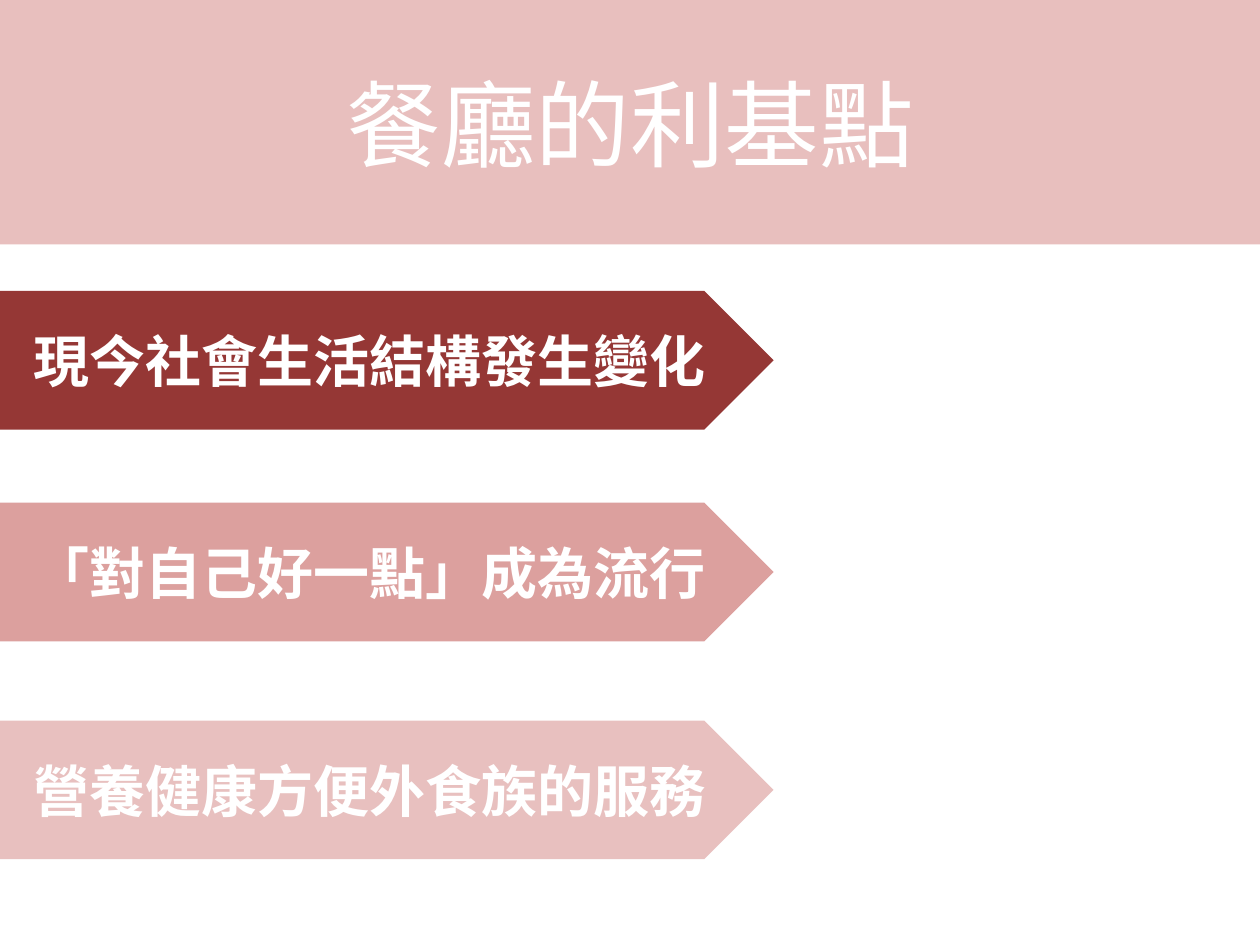
from lxml.etree import SubElement
from pptx import Presentation
from pptx.dml.color import RGBColor
from pptx.enum.shapes import MSO_SHAPE
from pptx.enum.text import MSO_ANCHOR, MSO_AUTO_SIZE, PP_ALIGN
from pptx.oxml.ns import qn
from pptx.util import Pt

WHITE = RGBColor(0xFF, 0xFF, 0xFF)
PINK = RGBColor(0xE6, 0xB9, 0xB8)
ROSE = RGBColor(0xD9, 0x96, 0x94)
MAROON = RGBColor(0x95, 0x37, 0x35)
FONT = "Noto Sans CJK SC"

# Content: text, top, fill colour, opacity in percent
TITLE = "餐廳的利基點"
POINTS = [
    ("現今社會生活結構發生變化", 166.3, MAROON, 100),
    ("「對自己好一點」成為流行", 287.3, ROSE, 90),
    ("營養健康方便外食族的服務", 411.8, PINK, 89),
]
SLIDE_W, SLIDE_H = 720, 540
TITLE_H = 139.7
ARROW_W, ARROW_H = 442.1, 79.2


def place(sp, left, top, width, height):
    sp.left, sp.top, sp.width, sp.height = map(Pt, (left, top, width, height))


def fill_shape(sp, color, opacity):
    sp.fill.solid()
    sp.fill.fore_color.rgb = color
    sp.line.fill.background()
    if opacity < 100:
        clr = sp.fill._xPr.find(qn("a:solidFill"))[0]
        SubElement(clr, qn("a:alpha"), val=str(opacity * 1000))


def write(sp, text, size, bold):
    tf = sp.text_frame
    tf.word_wrap = True
    tf.auto_size = MSO_AUTO_SIZE.NONE
    tf.vertical_anchor = MSO_ANCHOR.MIDDLE
    p = tf.paragraphs[0]
    p.alignment = PP_ALIGN.CENTER
    r = p.add_run()
    r.text = text
    for key, value in {"name": FONT, "size": Pt(size), "bold": bold}.items():
        setattr(r.font, key, value)
    r.font.color.rgb = WHITE
    SubElement(r.font._element, qn("a:ea"), typeface=FONT)


prs = Presentation()
prs.slide_width, prs.slide_height = Pt(SLIDE_W), Pt(SLIDE_H)
s = prs.slides.add_slide(prs.slide_layouts[5])

# Title band
title = s.shapes.title
place(title, 0, 0, SLIDE_W, TITLE_H)
fill_shape(title, PINK, 90)
write(title, TITLE, 54, False)

# Arrow for each point
for text, top, color, opacity in POINTS:
    sp = s.shapes.add_shape(MSO_SHAPE.PENTAGON, 0, 0, 0, 0)
    place(sp, 0, top, ARROW_W, ARROW_H)
    sp.shadow.inherit = False
    fill_shape(sp, color, opacity)
    write(sp, text, 32, True)

prs.save("out.pptx")
